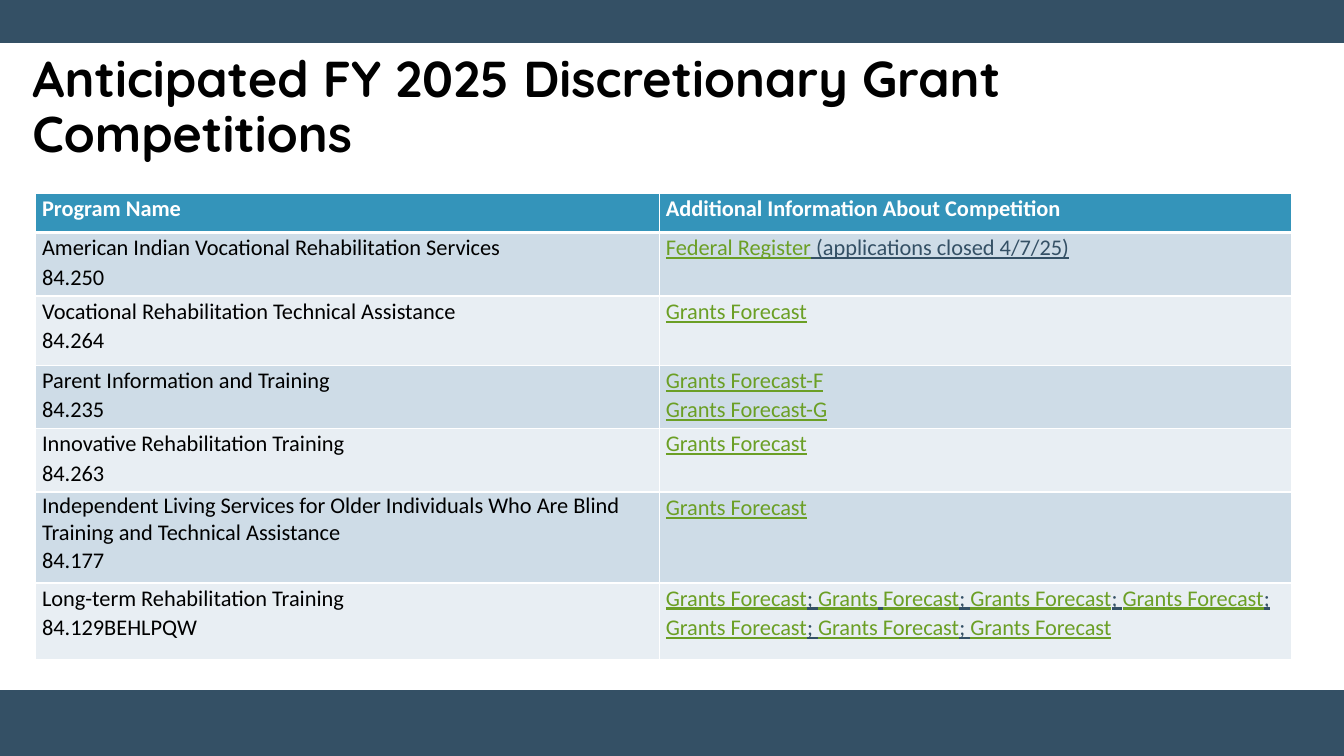
from dataclasses import dataclass

from lxml import etree
from pptx import Presentation
from pptx import util as u
from pptx.dml import color
from pptx.enum import shapes, text
from pptx.oxml import ns


@dataclass(frozen=True)
class Theme:
    band: str = "345065"
    header: str = "3494BA"
    odd_row: str = "CEDCE7"
    even_row: str = "E8EEF3"
    link: str = "6B9F25"
    black: str = "000000"
    white: str = "FFFFFF"
    title_font: str = "Quicksand"
    body_font: str = "Calibri"
    title_size: int = 36
    body_size: int = 16


theme = Theme()
FORECAST = "Grants Forecast"
SEPARATOR = "; "

HEADERS = ["Program Name", "Additional Information About Competition"]
PROGRAMS = [
    ("American Indian Vocational Rehabilitation Services", "84.250",
     [["Federal Register", " (applications closed 4/7/25)"]]),
    ("Vocational Rehabilitation Technical Assistance", "84.264", [[FORECAST]]),
    ("Parent Information and Training", "84.235",
     [["Grants Forecast-F"], ["Grants Forecast-G"]]),
    ("Innovative Rehabilitation Training", "84.263", [[FORECAST]]),
    ("Independent Living Services for Older Individuals Who Are Blind "
     "Training and Technical Assistance", "84.177", [[FORECAST]]),
    ("Long-term Rehabilitation Training", "84.129BEHLPQW",
     [[FORECAST, SEPARATOR, "Grants", " ", "Forecast"] + [SEPARATOR, FORECAST] * 5]),
]
COLUMN_WIDTHS = [15.72, 15.95]
ROW_HEIGHTS = [0.98, 1.6, 1.74, 1.6, 1.6, 2.29, 1.92]


def format_run(run, fill, size=theme.body_size, name=theme.body_font, bold=False, underline=False):
    run.font.size = u.Pt(size)
    run.font.name = name
    run.font.bold = bold
    run.font.underline = underline
    run.font.color.rgb = color.RGBColor.from_string(fill)


def prepare_cell(cell, fill, top=1, bottom=1):
    cell.margin_left = cell.margin_right = u.Cm(0.17)
    cell.margin_top = cell.margin_bottom = 0
    properties = cell._tc.get_or_add_tcPr()
    for side, points in (("L", 1), ("R", 1), ("T", top), ("B", bottom)):
        border = etree.SubElement(properties, ns.qn(f"a:ln{side}"), w=str(u.Pt(points)))
        solid = etree.SubElement(border, ns.qn("a:solidFill"))
        etree.SubElement(solid, ns.qn("a:srgbClr"), val=theme.white)
    cell.fill.solid()
    cell.fill.fore_color.rgb = color.RGBColor.from_string(fill)


presentation = Presentation()
presentation.slide_width = u.Cm(33.87)
presentation.slide_height = u.Cm(19.05)
slide = presentation.slides.add_slide(presentation.slide_layouts[5])

for top, height in ((17.4, 1.65), (0, 1.07)):
    band = slide.shapes.add_shape(
        shapes.MSO_SHAPE.RECTANGLE, 0, u.Cm(top), presentation.slide_width, u.Cm(height))
    band.shadow.inherit = False
    band.fill.solid()
    band.fill.fore_color.rgb = color.RGBColor.from_string(theme.band)
    band.line.color.rgb = color.RGBColor.from_string(theme.band)
    band.line.width = u.Pt(1)

title = slide.shapes.title
title.left, title.top, title.width, title.height = u.Cm(0.56), u.Cm(1.52), u.Cm(31.32), u.Cm(2.44)
title.text_frame.text = "Anticipated FY 2025 Discretionary Grant Competitions"
title.text_frame.word_wrap = True
title.text_frame.auto_size = text.MSO_AUTO_SIZE.NONE
title.text_frame.vertical_anchor = text.MSO_ANCHOR.MIDDLE
paragraph = title.text_frame.paragraphs[0]
paragraph.alignment = text.PP_ALIGN.LEFT
paragraph.line_spacing = 0.9
format_run(paragraph.runs[0], theme.black, theme.title_size, theme.title_font, bold=True)

table = slide.shapes.add_table(
    len(ROW_HEIGHTS), len(COLUMN_WIDTHS), u.Cm(0.89), u.Cm(4.88),
    u.Cm(sum(COLUMN_WIDTHS)), u.Cm(sum(ROW_HEIGHTS))).table
table.horz_banding = False
for column, width in zip(table.columns, COLUMN_WIDTHS):
    column.width = u.Cm(width)
for row, height in zip(table.rows, ROW_HEIGHTS):
    row.height = u.Cm(height)

for column_index, heading in enumerate(HEADERS):
    cell = table.cell(0, column_index)
    prepare_cell(cell, theme.header, bottom=3)
    cell.text_frame.text = heading
    paragraph = cell.text_frame.paragraphs[0]
    paragraph.line_spacing = 1.07
    format_run(paragraph.runs[0], theme.white, bold=True)

for row_index, (program, number, information) in enumerate(PROGRAMS, start=1):
    row_fill = theme.odd_row if row_index % 2 else theme.even_row
    name_cell, information_cell = table.cell(row_index, 0), table.cell(row_index, 1)
    for cell in (name_cell, information_cell):
        prepare_cell(cell, row_fill, top=3 if row_index == 1 else 1)

    name_cell.text_frame.text = f"{program}\n{number}"
    for paragraph in name_cell.text_frame.paragraphs:
        paragraph.line_spacing = 1.0 if number == "84.177" else 1.07
        format_run(paragraph.runs[0], theme.black)

    for line_index, pieces in enumerate(information):
        frame = information_cell.text_frame
        paragraph = frame.add_paragraph() if line_index else frame.paragraphs[0]
        paragraph.line_spacing = 1.07
        for piece_index, piece in enumerate(pieces):
            run = paragraph.add_run()
            run.text = piece
            format_run(run, theme.band if piece_index % 2 else theme.link, underline=True)

presentation.save("out.pptx")
